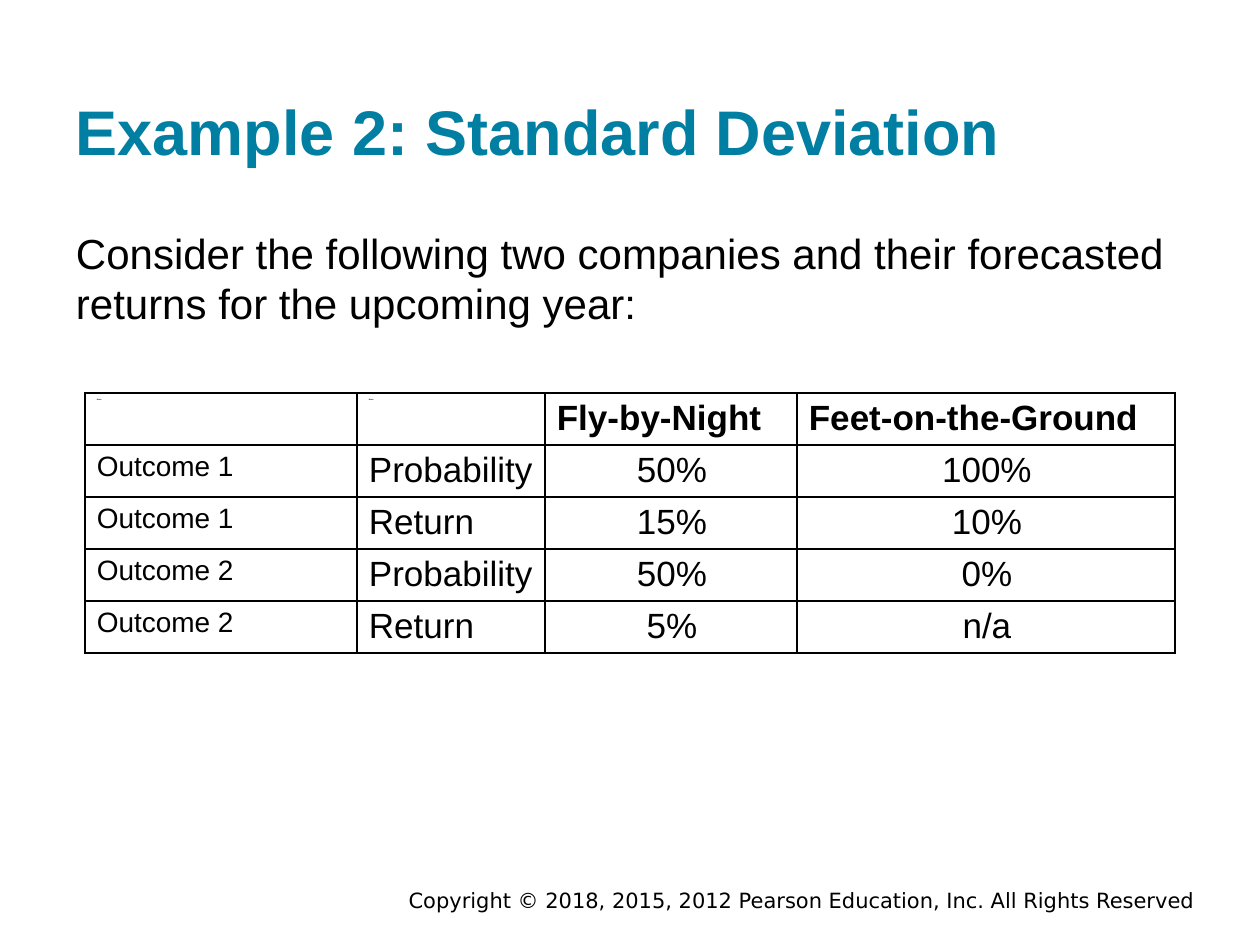
from pptx import Presentation
from pptx.dml.color import RGBColor
from pptx.enum.text import MSO_ANCHOR as Anchor, PP_ALIGN as Align
from pptx.oxml import parse_xml
from pptx.oxml.ns import nsdecls
from pptx.util import Emu, Pt

BLACK, WHITE, TEAL = "000000", "FFFFFF", "007FA3"


def px(length):
    return Emu(round(length * 914400 / 126))


def color(value):
    return RGBColor.from_string(value)


class SlideBuilder:
    font = "Arial"
    border_width = Pt(1)

    def __init__(self, deck):
        self.page = deck.slides.add_slide(deck.slide_layouts[6])

    def style(self, para, size, bold=False, fill=BLACK, font=None, align=Align.LEFT):
        para.alignment = align
        for span in para.runs:
            span.font.name = font or self.font
            span.font.size = Pt(size)
            span.font.bold = bold
            span.font.color.rgb = color(fill)

    def text(self, place, words, size, anchor=Anchor.TOP, inset=13, **look):
        box = self.page.shapes.add_textbox(*map(px, place))
        frame = box.text_frame
        frame.word_wrap = True
        frame.vertical_anchor = anchor
        frame.margin_left = frame.margin_right = px(13)
        frame.margin_top = frame.margin_bottom = px(inset)
        frame.text = words
        self.style(frame.paragraphs[0], size, **look)

    def border(self, cell):
        properties = cell._tc.get_or_add_tcPr()
        for position, side in enumerate(("lnL", "lnR", "lnT", "lnB")):
            line = parse_xml(
                f'<a:{side} {nsdecls("a")} w="{self.border_width}"><a:solidFill>'
                f'<a:srgbClr val="{BLACK}"/></a:solidFill></a:{side}>'
            )
            properties.insert(position, line)

    def table(self, left, top, widths, row_height, rows):
        frame = self.page.shapes.add_table(
            len(rows), len(widths), px(left), px(top),
            px(sum(widths)), px(row_height * len(rows)),
        )
        grid = frame.table
        for column, width in zip(grid.columns, widths):
            column.width = px(width)
        for row_index, values in enumerate(rows):
            grid.rows[row_index].height = px(row_height)
            for column_index, value in enumerate(values):
                cell = grid.cell(row_index, column_index)
                cell.fill.solid()
                cell.fill.fore_color.rgb = color(WHITE)
                cell.margin_left, cell.margin_right = px(12), px(10)
                cell.margin_top, cell.margin_bottom = px(6), px(3)
                self.border(cell)
                cell.text_frame.text = value
                header = row_index == 0
                label = column_index < 2
                if header and label:
                    size = 1
                else:
                    size = 16 if column_index == 0 else 20
                align = Align.LEFT if header or label else Align.CENTER
                self.style(cell.text_frame.paragraphs[0], size, bold=header, align=align)


def main():
    deck = Presentation()
    deck.slide_width, deck.slide_height = px(1260), px(945)
    slide = SlideBuilder(deck)
    slide.text(
        (220, 886, 988, 28),
        "Copyright © 2018, 2015, 2012 Pearson Education, Inc. All Rights Reserved",
        12, anchor=Anchor.MIDDLE, inset=6, font="DejaVu Sans", align=Align.RIGHT,
    )
    slide.text((63, 30, 1134, 151), "Example 2: Standard Deviation", 36,
               anchor=Anchor.BOTTOM, bold=True, fill=TEAL)
    slide.text(
        (63, 214, 1134, 121),
        "Consider the following two companies and their forecasted "
        "returns for the upcoming year:",
        24,
    )
    slide.table(85, 393, (272, 188, 252, 378), 52, (
        ("Blank", "Blank", "Fly-by-Night", "Feet-on-the-Ground"),
        ("Outcome 1", "Probability", "50%", "100%"),
        ("Outcome 1", "Return", "15%", "10%"),
        ("Outcome 2", "Probability", "50%", "0%"),
        ("Outcome 2", "Return", "5%", "n/a"),
    ))
    deck.save("out.pptx")


if __name__ == "__main__":
    main()
